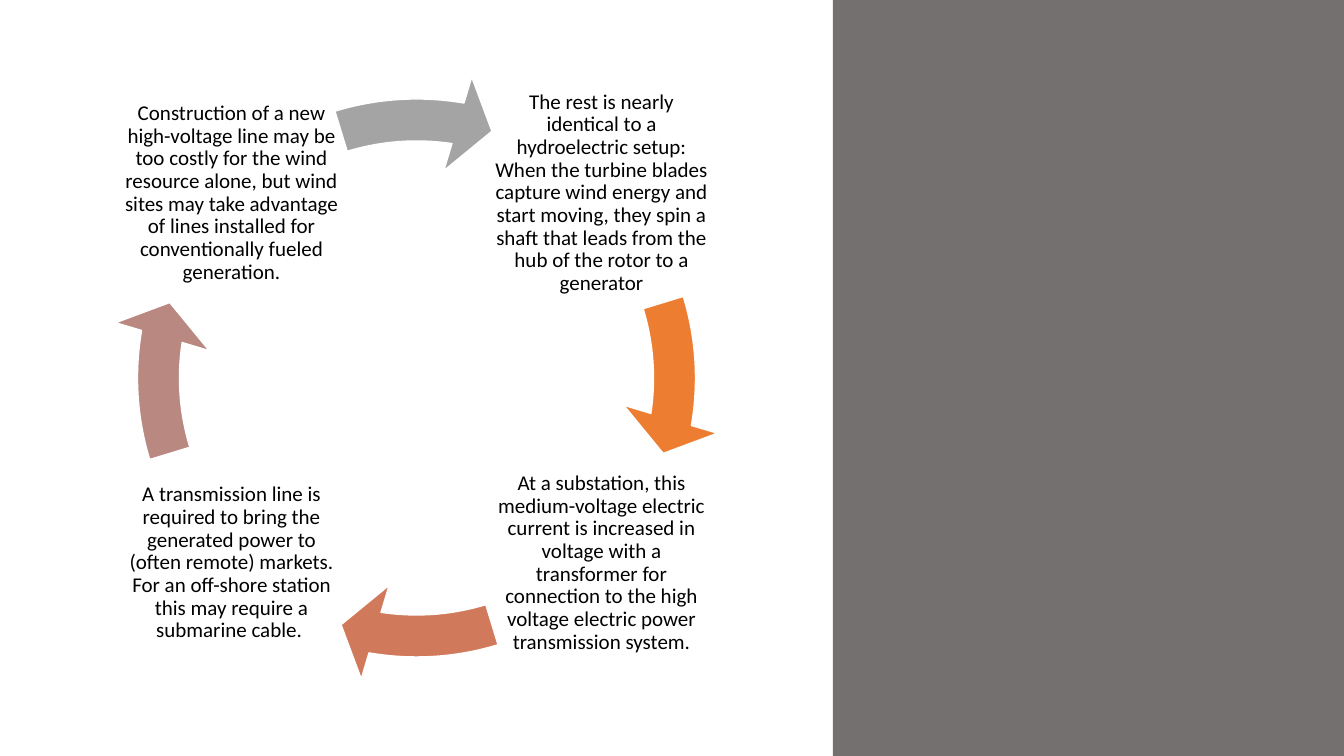
import math
import lxml.etree
import pptx
import pptx.util
import pptx.dml.color
import pptx.enum.shapes
import pptx.enum.text
import pptx.oxml.ns

RGBColor = pptx.dml.color.RGBColor
qn = pptx.oxml.ns.qn
PX = 914400 / 100.8
WIDTH, HEIGHT = 1344, 756

WHITE = RGBColor(0xFF, 0xFF, 0xFF)
BLACK = RGBColor(0x00, 0x00, 0x00)
PANEL_GRAY = RGBColor(0x75, 0x70, 0x70)
ORANGE = RGBColor(0xED, 0x7D, 0x31)
RUST = RGBColor(0xD0, 0x7A, 0x5B)
ROSE = RGBColor(0xB8, 0x88, 0x81)
GRAY = RGBColor(0xA4, 0xA4, 0xA4)

STEPS = [
    ("The rest is nearly identical to a hydroelectric setup: When the turbine "
     "blades capture wind energy and start moving, they spin a shaft that leads "
     "from the hub of the rotor to a generator", ORANGE),
    ("At a substation, this medium-voltage electric current is increased in "
     "voltage with a transformer for connection to the high voltage electric "
     "power transmission system.", RUST),
    ("A transmission line is required to bring the generated power to (often "
     "remote) markets. For an off-shore station this may require a submarine "
     "cable. ", ROSE),
    ("Construction of a new high-voltage line may be too costly for the wind "
     "resource alone, but wind sites may take advantage of lines installed for "
     "conventionally fueled generation.", GRAY),
]

TEXT_SIZE = 218
TEXT_OFFSET = 185
RING_SIZE = 615
TAIL_ANGLE = -17
OUTER_RADIUS, OUTER_END = 279, 9.8
INNER_RADIUS, INNER_END = 237, 8.6
HEAD = [(306, 10.4), (258, 17), (209, 7.5)]


def px(length):
    return pptx.util.Emu(round(length * PX))


def add_text(slide, box, text, size=15, font="Calibri", color=BLACK):
    sp = slide.shapes.add_textbox(*map(px, box))
    tf = sp.text_frame
    tf.word_wrap = True
    tf.vertical_anchor = pptx.enum.text.MSO_ANCHOR.MIDDLE
    tf.margin_left = tf.margin_right = tf.margin_top = tf.margin_bottom = px(2)
    p = tf.paragraphs[0]
    p.alignment = pptx.enum.text.PP_ALIGN.CENTER
    p.line_spacing = 0.9
    r = p.add_run()
    r.text = text
    r.font.size = pptx.util.Pt(size)
    r.font.name = font
    r.font.color.rgb = color


def arc(radius, start, end):
    sweep = math.radians(end - start)
    handle = 4 / 3 * math.tan(sweep / 4)
    reach = radius * math.hypot(1, handle)
    lean = math.degrees(math.atan(handle))
    return [(reach, start + lean), (reach, end - lean), (radius, end)]


def arrow_outline():
    return [
        ("moveTo", [(OUTER_RADIUS, TAIL_ANGLE)]),
        ("cubicBezTo", arc(OUTER_RADIUS, TAIL_ANGLE, OUTER_END)),
        *[("lnTo", [corner]) for corner in HEAD],
        ("lnTo", [(INNER_RADIUS, INNER_END)]),
        ("cubicBezTo", arc(INNER_RADIUS, INNER_END, TAIL_ANGLE)),
        ("close", []),
    ]


def add_arrow(slide, box, turn, color):
    left, top, size, _ = map(px, box)
    builder = slide.shapes.build_freeform(left, top)
    builder.add_line_segments([(left + size, top + size)])
    sp = builder.convert_to_shape()
    outline = sp.element.find(".//" + qn("a:path"))
    for old in list(outline):
        outline.remove(old)
    for command, points in arrow_outline():
        segment = lxml.etree.SubElement(outline, qn("a:" + command))
        for radius, angle in points:
            a = math.radians(angle + turn)
            pt = lxml.etree.SubElement(segment, qn("a:pt"))
            pt.set("x", str(round(size / 2 + px(radius * math.sin(a)))))
            pt.set("y", str(round(size / 2 - px(radius * math.cos(a)))))
    sp.shadow.inherit = False
    sp.fill.solid()
    sp.fill.fore_color.rgb = color
    sp.line.color.rgb = WHITE
    sp.line.width = pptx.util.Pt(1)


def add_cycle(slide, box):
    left, top, width, height = box
    cx, cy = left + width / 2, top + height / 2
    ring = (cx - RING_SIZE / 2, cy - RING_SIZE / 2, RING_SIZE, RING_SIZE)
    for i, (text, color) in enumerate(STEPS):
        dx = TEXT_OFFSET if i < 2 else -TEXT_OFFSET
        dy = TEXT_OFFSET if i in (1, 2) else -TEXT_OFFSET
        half = TEXT_SIZE / 2
        add_text(slide, (cx + dx - half, cy + dy - half, TEXT_SIZE, TEXT_SIZE), text)
        add_arrow(slide, ring, 90 * (i + 1), color)


def add_panel(slide, box):
    sp = slide.shapes.add_shape(
        pptx.enum.shapes.MSO_SHAPE.RECTANGLE, *map(px, box))
    sp.shadow.inherit = False
    sp.fill.solid()
    sp.fill.fore_color.rgb = PANEL_GRAY
    sp.line.fill.background()


def main():
    prs = pptx.Presentation()
    prs.slide_width, prs.slide_height = px(WIDTH), px(HEIGHT)
    slide = prs.slides.add_slide(prs.slide_layouts[6])
    panel_left = 833
    add_panel(slide, (panel_left, 0, WIDTH - panel_left, HEIGHT))
    add_cycle(slide, (0, 0, panel_left, HEIGHT))
    prs.save("out.pptx")


if __name__ == "__main__":
    main()
